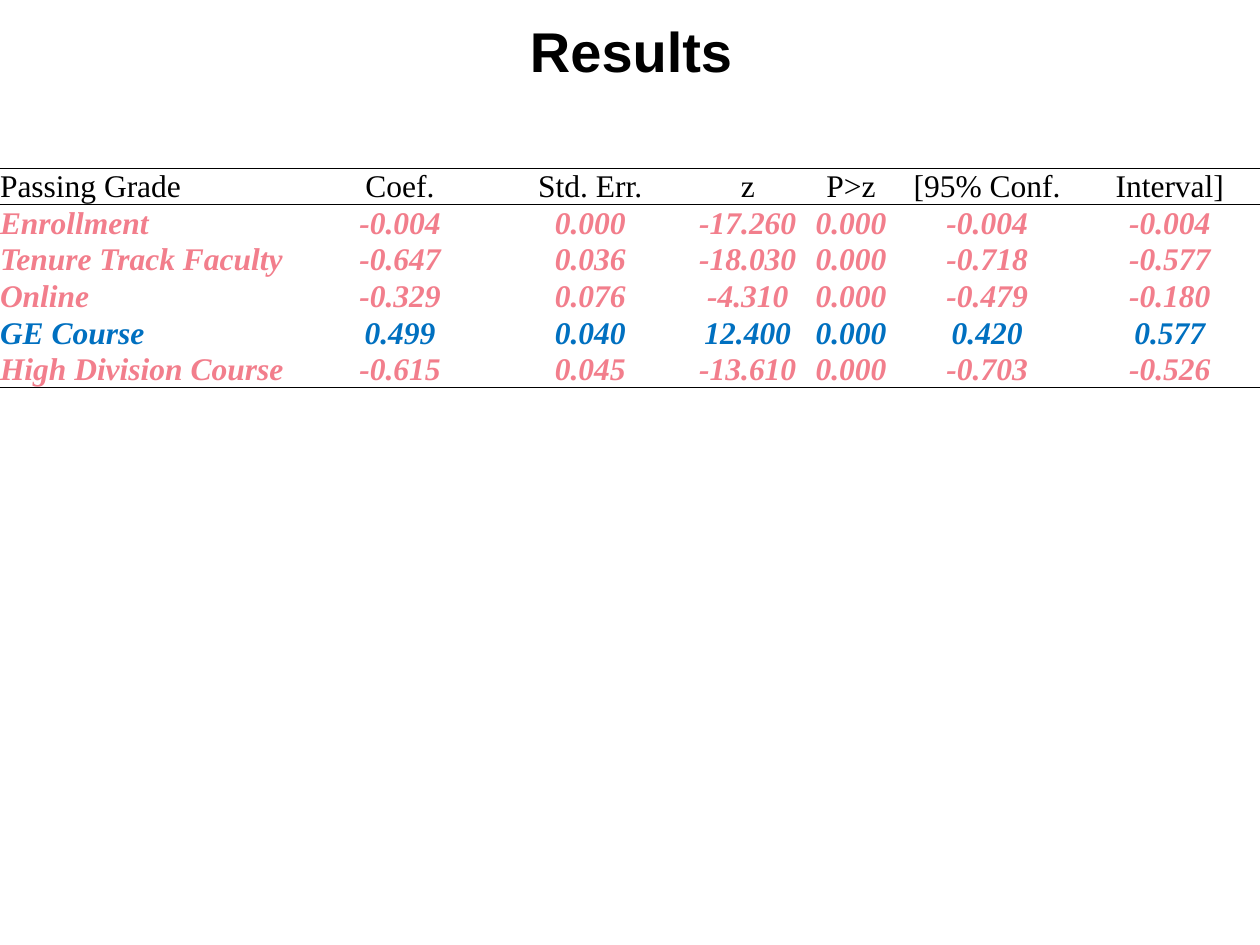
from lxml import etree
from pptx import Presentation
from pptx.dml.color import RGBColor
from pptx.enum.text import MSO_ANCHOR, PP_ALIGN
from pptx.oxml.ns import qn
from pptx.util import Inches, Pt

LEFT, CENTER = PP_ALIGN.LEFT, PP_ALIGN.CENTER
MIDDLE, BOTTOM = MSO_ANCHOR.MIDDLE, MSO_ANCHOR.BOTTOM
TITLE_ONLY = 5

COLORS = {"ink": "000000", "negative": "F27E8C", "positive": "0070C0"}

HEADER = ["Passing Grade", "Coef.", "Std. Err.", "z", "P>z", "[95% Conf.", "Interval]"]
ESTIMATES = [
    ["Enrollment", "-0.004", "0.000", "-17.260", "0.000", "-0.004", "-0.004"],
    ["Tenure Track Faculty", "-0.647", "0.036", "-18.030", "0.000", "-0.718", "-0.577"],
    ["Online", "-0.329", "0.076", "-4.310", "0.000", "-0.479", "-0.180"],
    ["GE Course", "0.499", "0.040", "12.400", "0.000", "0.420", "0.577"],
    ["High Division Course", "-0.615", "0.045", "-13.610", "0.000", "-0.703", "-0.526"],
]
COLUMN_WIDTHS = [2.45, 1.45, 1.57, 0.93, 0.71, 1.45, 1.45]
ROW_HEIGHT = 0.29


class SlideBuilder:
    """Holds the style and the current slide."""

    title_font, table_font = "Arial", "Times New Roman"
    title_size, table_size, rule_width = 32, 18, 0.5

    def __init__(self, prs):
        self.width, self.height = prs.slide_width, prs.slide_height
        self.slide = prs.slides.add_slide(prs.slide_layouts[TITLE_ONLY])

    def run(self, paragraph, text, font, size, color, bold, italic=False):
        run = paragraph.add_run()
        run.text = text
        run.font.name, run.font.size = font, Pt(size)
        run.font.bold, run.font.italic = bold, italic
        run.font.color.rgb = RGBColor.from_string(COLORS[color])

    def title(self, text, x, y, w, h):
        """Fill the title placeholder; the box is given as shares of the slide."""
        title = self.slide.shapes.title
        title.left, title.width = int(x * self.width), int(w * self.width)
        title.top, title.height = int(y * self.height), int(h * self.height)
        frame = title.text_frame
        frame.vertical_anchor = MIDDLE
        frame.paragraphs[0].alignment = CENTER
        self.run(frame.paragraphs[0], text, self.title_font, self.title_size, "ink", True)

    def borders(self, cell, ruled_sides):
        """Rule the given sides of a cell and clear the others."""
        properties = cell._tc.get_or_add_tcPr()
        for position, side in enumerate("LRTB"):
            line = etree.Element(qn(f"a:ln{side}"), w=str(Pt(self.rule_width)))
            if side in ruled_sides:
                fill = etree.SubElement(line, qn("a:solidFill"))
                etree.SubElement(fill, qn("a:srgbClr"), val=COLORS["ink"])
            else:
                etree.SubElement(line, qn("a:noFill"))
            properties.insert(position, line)

    def cell(self, cell, text, align, color, emphasis, ruled_sides):
        cell.margin_left = cell.margin_right = cell.margin_top = cell.margin_bottom = 0
        cell.vertical_anchor = BOTTOM
        cell.fill.background()
        self.borders(cell, ruled_sides)
        paragraph = cell.text_frame.paragraphs[0]
        paragraph.alignment = align
        self.run(paragraph, text, self.table_font, self.table_size, color, emphasis, emphasis)

    def regression_table(self, header, estimates, y):
        rows = [header] + estimates
        table = self.slide.shapes.add_table(
            len(rows), len(header), 0, int(y * self.height),
            self.width, Inches(ROW_HEIGHT * len(rows))).table
        table.first_row = table.horz_banding = False
        for column, width in zip(table.columns, COLUMN_WIDTHS):
            column.width = Inches(width)
        for r, values in enumerate(rows):
            table.rows[r].height = Inches(ROW_HEIGHT)
            # Rules frame the header and close the last row
            ruled = {0: "TB", 1: "T", len(rows) - 1: "B"}.get(r, "")
            # The sign of the coefficient sets the colour
            color = "negative" if values[1].startswith("-") else "positive"
            for c, text in enumerate(values):
                self.cell(table.cell(r, c), text, CENTER if c else LEFT,
                          color if r else "ink", r > 0, ruled)


def main():
    prs = Presentation()
    prs.slide_width, prs.slide_height = Inches(10), Inches(7.5)
    results = SlideBuilder(prs)

    # Heading
    results.title("Results", 0.006, 0.007, 0.99, 0.093)

    # Regression estimates
    results.regression_table(HEADER, ESTIMATES, 0.178)

    prs.save("out.pptx")


if __name__ == "__main__":
    main()
